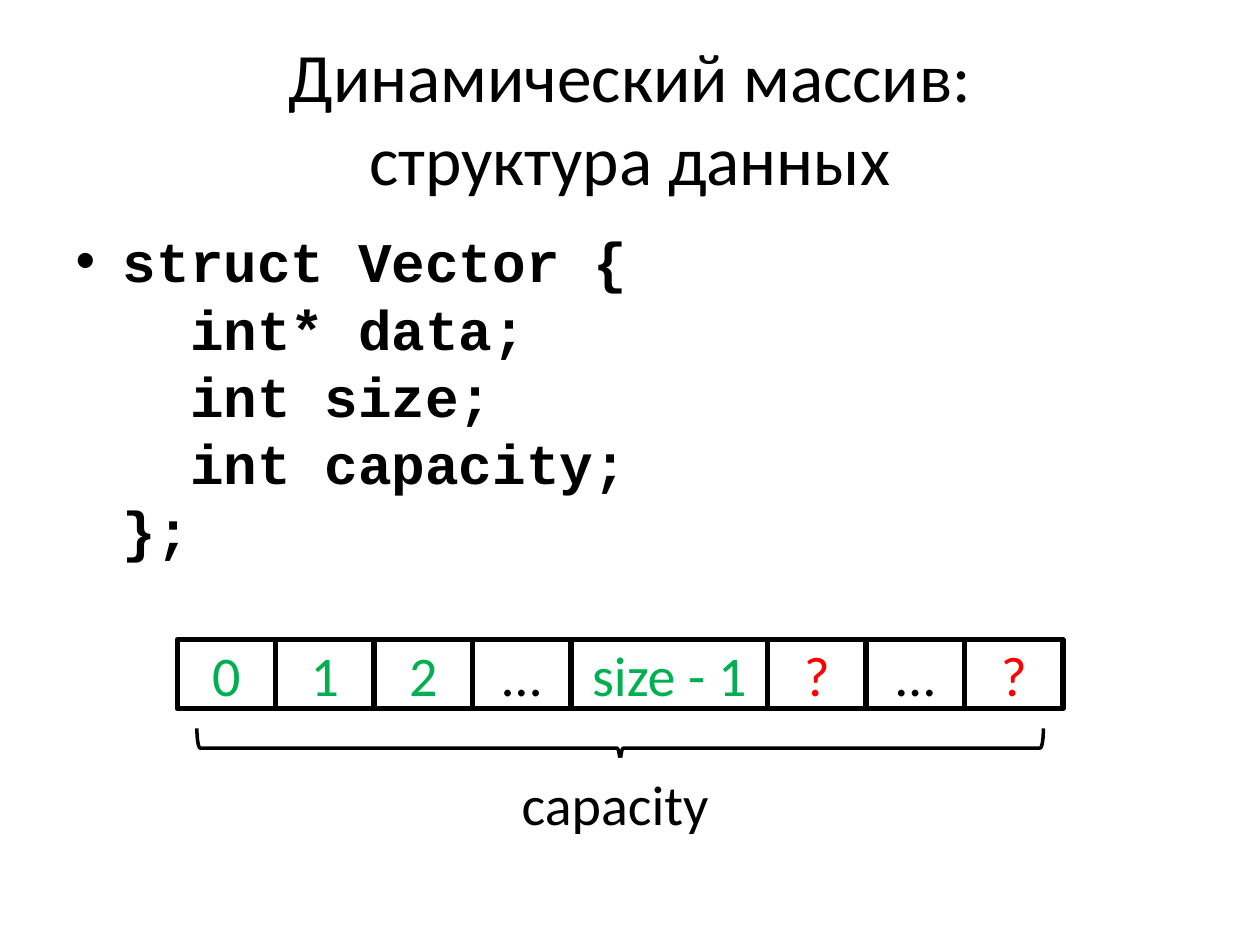
from dataclasses import dataclass

from pptx import Presentation
from pptx.dml.color import RGBColor
from pptx.enum.shapes import MSO_SHAPE
from pptx.enum.text import MSO_ANCHOR, MSO_AUTO_SIZE, PP_ALIGN
from pptx.shapes.autoshape import Shape
from pptx.slide import Slide
from pptx.util import Emu, Pt

PX_PER_INCH = 128
COLOURS = {"ink": "000000", "paper": "FFFFFF", "used": "00B050", "spare": "FF0000"}
CELL_LEFT, CELL_TOP, CELL_WIDTH, CELL_HEIGHT = 180, 650, 100, 70


@dataclass(frozen=True)
class Box:
    left: int
    top: int
    width: int
    height: int

    def emu(self) -> list[Emu]:
        lengths = (self.left, self.top, self.width, self.height)
        return [px(length) for length in lengths]


@dataclass(frozen=True)
class Cell:
    text: str
    colour: str
    span: int = 1


CELLS = [
    Cell("0", "used"),
    Cell("1", "used"),
    Cell("2", "used"),
    Cell("…", "ink"),
    Cell("size - 1", "used", span=2),
    Cell("?", "spare"),
    Cell("…", "ink"),
    Cell("?", "spare"),
]


def px(length: int) -> Emu:
    return Emu(round(length * 914400 / PX_PER_INCH))


def colour(name: str) -> RGBColor:
    return RGBColor.from_string(COLOURS[name])


def set_text(shape: Shape, text: str, size: float, font: str = "Calibri",
             ink: str = "ink", bold: bool = False) -> None:
    """Write one paragraph; a vertical tab in the text is a line break."""
    shape.text_frame.text = text
    for span in shape.text_frame.paragraphs[0].runs:
        span.font.size = Pt(size)
        span.font.name = font
        span.font.bold = bold
        span.font.color.rgb = colour(ink)


def fill_placeholder(shape: Shape, box: Box, text: str, size: float,
                     font: str, bold: bool = False) -> None:
    shape.left, shape.top, shape.width, shape.height = box.emu()
    set_text(shape, text, size, font, bold=bold)
    shape.text_frame.auto_size = MSO_AUTO_SIZE.NONE


def add_plain_shape(page: Slide, kind: MSO_SHAPE, box: Box, line_width: int = 0) -> Shape:
    """Add an unfilled shape, outlined only if a line width is given."""
    shape = page.shapes.add_shape(kind, *box.emu())
    shape.shadow.inherit = False
    shape.fill.background()
    if line_width:
        shape.line.color.rgb = colour("ink")
        shape.line.width = Pt(line_width)
    else:
        shape.line.fill.background()
    return shape


def add_label(page: Slide, box: Box, text: str, ink: str, line_width: int = 0) -> Shape:
    shape = add_plain_shape(page, MSO_SHAPE.RECTANGLE, box, line_width)
    set_text(shape, text, 32, ink=ink)
    shape.text_frame.vertical_anchor = MSO_ANCHOR.MIDDLE
    shape.text_frame.paragraphs[0].alignment = PP_ALIGN.CENTER
    return shape


def add_array(page: Slide) -> None:
    left = CELL_LEFT
    for cell in CELLS:
        width = cell.span * CELL_WIDTH
        add_label(page, Box(left, CELL_TOP, width, CELL_HEIGHT), cell.text, cell.colour, 3)
        left += width


def main() -> None:
    deck = Presentation()
    deck.slide_width, deck.slide_height = px(1280), px(960)
    page = deck.slides.add_slide(deck.slide_layouts[1])

    fill_placeholder(page.shapes.title, Box(64, 38, 1152, 160),
                     "Динамический массив:\vструктура данных", 39.6, "Calibri")
    code = ["struct Vector {", "  int* data;", "  int size;", "  int capacity;", "};"]
    fill_placeholder(page.placeholders[1], Box(64, 224, 1152, 634),
                     "\v".join(code), 32, "Courier New", bold=True)

    add_array(page)
    brace = add_plain_shape(page, MSO_SHAPE.RIGHT_BRACE, Box(610, 330, 40, 860), 2)
    brace.rotation = 90
    capacity = add_label(page, Box(490, 770, 270, 92), "capacity", "ink")
    capacity.fill.solid()
    capacity.fill.fore_color.rgb = colour("paper")

    deck.save("out.pptx")


if __name__ == "__main__":
    main()
